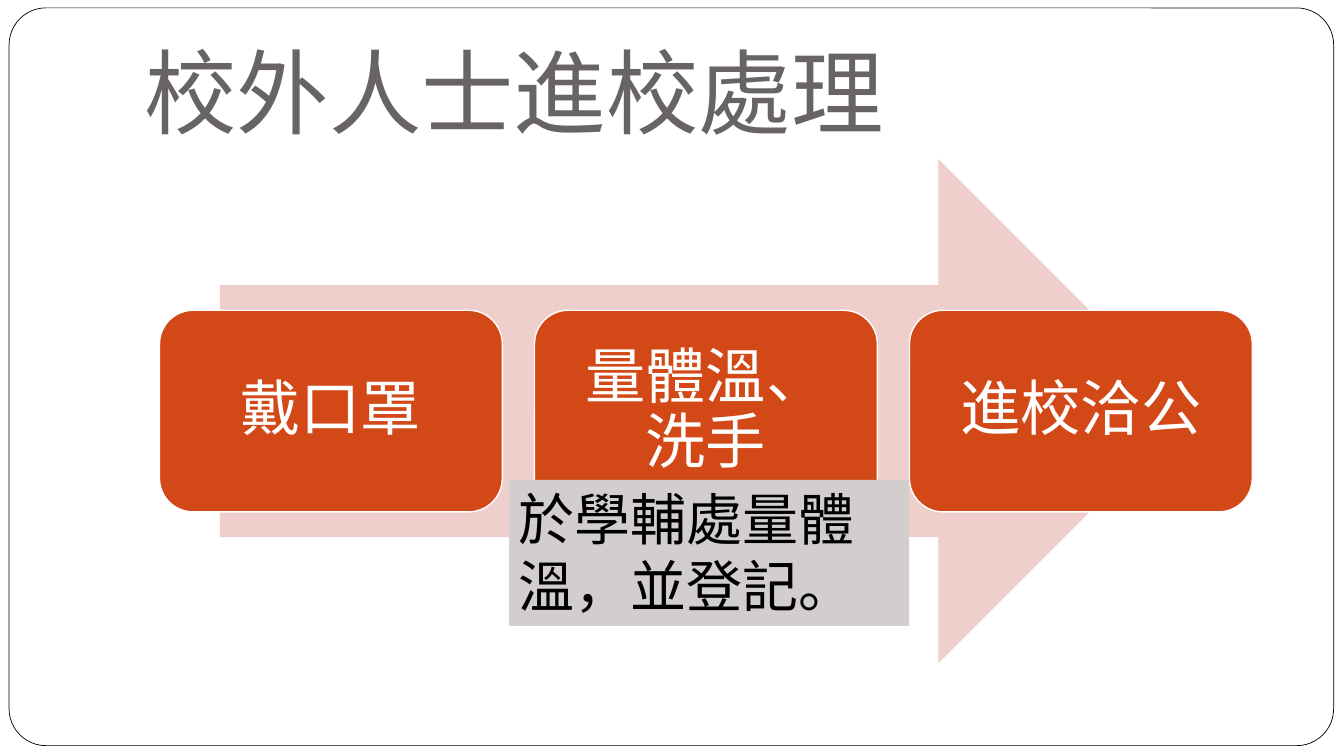
from pptx import Presentation
from pptx.dml.color import RGBColor
from pptx.enum.shapes import MSO_SHAPE as SHAPE
from pptx.enum.text import MSO_ANCHOR as ANCHOR, PP_ALIGN as ALIGN
from pptx.util import Cm, Pt

prs = Presentation()
prs.slide_width, prs.slide_height = Cm(33.87), Cm(19.05)
s = prs.slides.add_slide(prs.slide_layouts[6])


def add_block(kind, box, fill, line=None, width=0):
    sp = s.shapes.add_shape(kind, *map(Cm, box))
    sp.shadow.inherit = False
    sp.fill.solid()
    sp.fill.fore_color.rgb = RGBColor.from_string(fill)
    if line:
        sp.line.color.rgb = RGBColor.from_string(line)
        sp.line.width = Pt(width)
    else:
        sp.line.fill.background()
    return sp


def write(sp, text, size, color, font="Times New Roman", align=ALIGN.LEFT, spacing=1.0, **frame):
    """Put one paragraph into sp; frame holds text frame settings."""
    tf = sp.text_frame
    tf.word_wrap = True
    for name, value in frame.items():
        setattr(tf, name, value)
    p = tf.paragraphs[0]
    p.alignment, p.line_spacing = align, spacing
    r = p.add_run()
    r.text = text
    r.font.name, r.font.size = font, Pt(size)
    r.font.color.rgb = RGBColor.from_string(color)


border = add_block(SHAPE.ROUNDED_RECTANGLE, (0.23, 0.2, 33.38, 18.59), "FFFFFF", "000000", 0.5)
border.adjustments[0] = 0.05

title = s.shapes.add_textbox(Cm(3.39), Cm(0.76), Cm(28.78), Cm(3.18))
write(title, "校外人士進校處理", 66, "696464", "Lato",
      vertical_anchor=ANCHOR.BOTTOM, margin_bottom=Cm(0.25))

add_block(SHAPE.RIGHT_ARROW, (5.54, 4.01, 24.46, 12.7), "EFCFCC")

inset = Cm(0.46)
for i, step in enumerate(("戴口罩", "量體溫、洗手", "進校洽公")):
    box = (4.02 + i * 9.45, 7.82, 8.64, 5.08)
    write(add_block(SHAPE.ROUNDED_RECTANGLE, box, "D34817", "FFFFFF", 1),
          step, 43, "FFFFFF", align=ALIGN.CENTER, spacing=0.9,
          vertical_anchor=ANCHOR.MIDDLE, margin_left=inset, margin_right=inset,
          margin_top=inset, margin_bottom=inset)

note = add_block(SHAPE.RECTANGLE, (12.83, 12.09, 10.08, 3.68), "D3CECE")
write(note, "於學輔處量體溫，並登記。", 40, "000000", vertical_anchor=ANCHOR.TOP)

prs.save("out.pptx")
